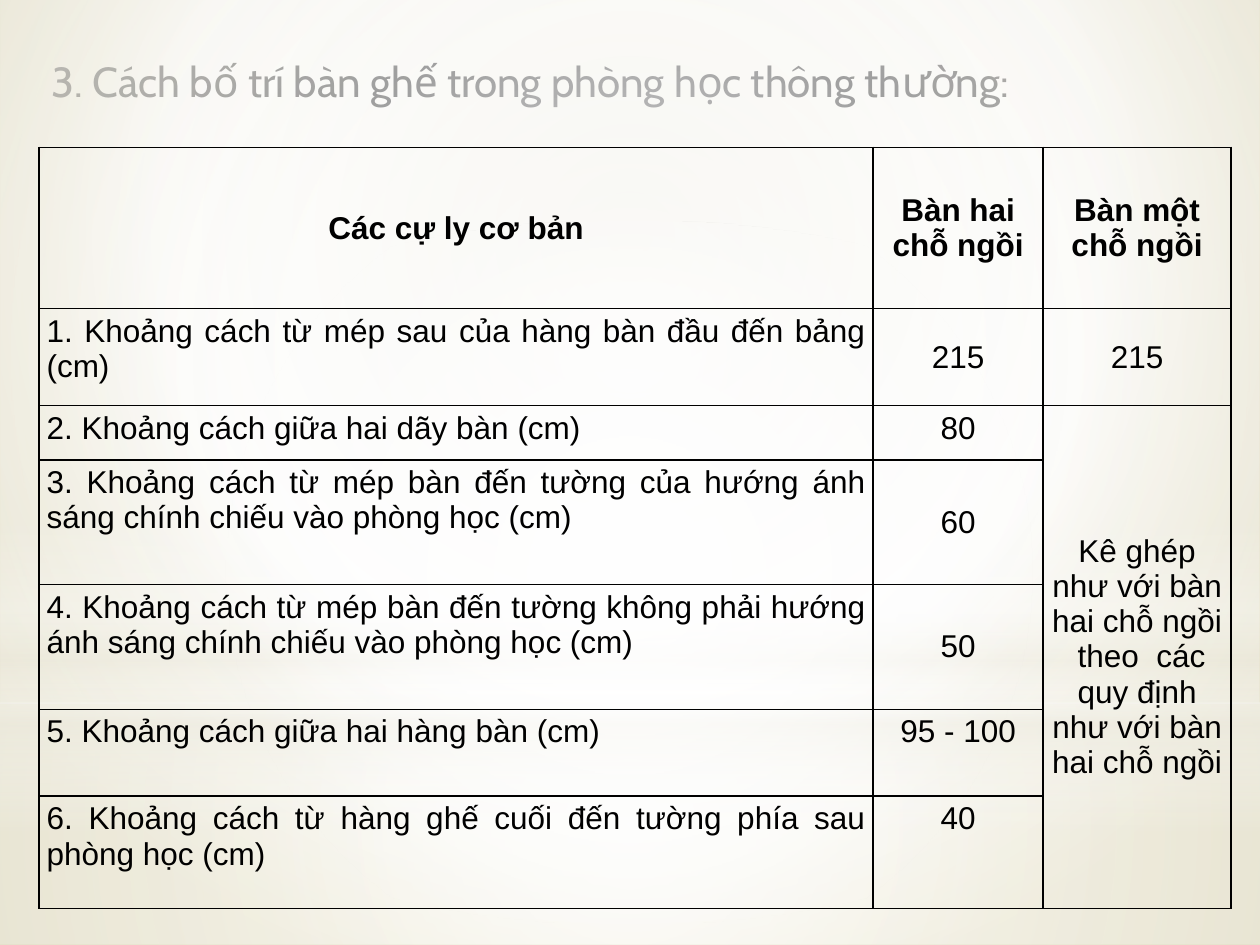
"""Build a slide with a table of desk spacing in an ordinary classroom."""
from dataclasses import dataclass

from lxml.etree import SubElement
from pptx import Presentation
from pptx.dml.color import RGBColor
from pptx.enum.shapes import MSO_SHAPE
from pptx.enum.text import MSO_ANCHOR, MSO_AUTO_SIZE, PP_ALIGN
from pptx.oxml import parse_xml
from pptx.oxml.ns import nsdecls, qn
from pptx.util import Inches, Pt


@dataclass(frozen=True)
class Theme:
    ink: str = "000000"
    white: str = "FFFFFF"
    cream: str = "EEECE1"
    edge: str = "E7E4D4"
    sand: str = "D5CC9F"
    title_font: str = "Cabin"
    table_font: str = "Arial"
    title_size: int = 24
    table_size: int = 18
    border_width: int = 1


def fill_gradient(owner, fill, stops, direction):
    fill.gradient()
    stop_xml = "".join(
        f'<a:gs pos="{position * 1000}"><a:srgbClr val="{color}">'
        f'<a:alpha val="{opacity * 1000}"/></a:srgbClr></a:gs>'
        for position, color, opacity in stops
    )
    gradient = parse_xml(
        f'<a:gradFill {nsdecls("a")} rotWithShape="1"><a:gsLst>{stop_xml}</a:gsLst>'
        f"{direction}</a:gradFill>"
    )
    current = owner.element.find(".//" + qn("a:gradFill"))
    current.getparent().replace(current, gradient)


def circle(left, top, right, bottom):
    return (
        f'<a:path path="circle"><a:fillToRect l="{left * 1000}" t="{top * 1000}" '
        f'r="{right * 1000}" b="{bottom * 1000}"/></a:path>'
    )


theme = Theme()
ink = RGBColor.from_string(theme.ink)
deck = Presentation()
deck.slide_width, deck.slide_height = Inches(10), Inches(7.5)
page = deck.slides.add_slide(deck.slide_layouts[5])

backdrop = [(0, theme.edge, 100), (60, theme.white, 100), (100, theme.sand, 100)]
fill_gradient(page, page.background.fill, backdrop, circle(20, 10, 20, 60))

centred = circle(50, 50, 50, 50)
downward = '<a:lin ang="5400000" scaled="0"/>'
glows = [
    (MSO_SHAPE.RECTANGLE, 5.58, 1.92, centred,
     [(0, theme.white, 91), (37, theme.white, 76), (100, theme.cream, 79)]),
    (MSO_SHAPE.RECTANGLE, 0, 5.58, centred,
     [(0, theme.white, 89), (48, theme.white, 62), (100, theme.cream, 79)]),
    (MSO_SHAPE.RECTANGLE, 4.12, 2.5, downward,
     [(0, theme.white, 0), (29, theme.white, 30), (45, theme.cream, 40),
      (55, theme.white, 26), (65, theme.cream, 60), (100, theme.white, 0)]),
    (MSO_SHAPE.OVAL, 1.75, 5.58, centred,
     [(0, theme.white, 100), (56, theme.white, 0)]),
]
for preset, top, height, direction, stops in glows:
    glow = page.shapes.add_shape(preset, 0, Inches(top), deck.slide_width, Inches(height))
    glow.shadow.inherit = False
    glow.line.fill.background()
    fill_gradient(glow, glow.fill, stops, direction)

title = page.shapes.title
title.left, title.top = Inches(0.31), Inches(0.39)
title.width, title.height = Inches(9.06), Inches(0.5)
frame = title.text_frame
frame.text = "3. Cách bố trí bàn ghế trong phòng học thông thường:"
frame.word_wrap = True
frame.auto_size = MSO_AUTO_SIZE.SHAPE_TO_FIT_TEXT
frame.vertical_anchor = MSO_ANCHOR.TOP
heading = frame.paragraphs[0]
heading.alignment = PP_ALIGN.LEFT
heading.font.name, heading.font.size = theme.title_font, Pt(theme.title_size)
heading.font.color.rgb = ink

rows = [
    ("Các cự ly cơ bản", "Bàn hai chỗ ngồi", "Bàn một chỗ ngồi"),
    ("1. Khoảng cách từ mép sau của hàng bàn đầu đến bảng (cm)", "215", "215"),
    ("2. Khoảng cách giữa hai dãy bàn (cm)", "80",
     "Kê ghép như với bàn hai chỗ ngồi  theo  các quy định như với bàn hai chỗ ngồi"),
    ("3. Khoảng cách từ mép bàn đến tường của hướng ánh sáng chính chiếu vào phòng học (cm)",
     "60", ""),
    ("4. Khoảng cách từ mép bàn đến tường không phải hướng ánh sáng chính chiếu vào phòng học (cm)",
     "50", ""),
    ("5. Khoảng cách giữa hai hàng bàn (cm)", "95 - 100", ""),
    ("6. Khoảng cách từ hàng ghế cuối đến tường phía sau phòng học (cm)", "40", ""),
]
column_widths = [6.62, 1.35, 1.49]
row_heights = [1.28, 0.77, 0.43, 0.99, 0.99, 0.69, 0.89]
top_values = {"80", "95 - 100", "40"}

table = page.shapes.add_table(
    len(rows), len(column_widths), Inches(0.31), Inches(1.17),
    Inches(sum(column_widths)), Inches(sum(row_heights)),
).table
table.horz_banding = False
for column, width in zip(table.columns, column_widths):
    column.width = Inches(width)
for row, height in zip(table.rows, row_heights):
    row.height = Inches(height)
table.cell(2, 2).merge(table.cell(6, 2))

for row_index, texts in enumerate(rows):
    for column_index, text in enumerate(texts):
        cell = table.cell(row_index, column_index)
        is_header = row_index == 0
        is_label = column_index == 0 and not is_header
        at_top = is_label or text in top_values
        cell.vertical_anchor = MSO_ANCHOR.TOP if at_top else MSO_ANCHOR.MIDDLE
        cell.margin_left = cell.margin_right = Inches(0.06)
        cell.margin_top = cell.margin_bottom = Inches(0.04)
        cell.fill.background()
        properties = cell._tc.get_or_add_tcPr()
        for position, side in enumerate(("a:lnL", "a:lnR", "a:lnT", "a:lnB")):
            border = SubElement(properties, qn(side), w=str(Pt(theme.border_width)))
            solid = SubElement(border, qn("a:solidFill"))
            SubElement(solid, qn("a:srgbClr"), val=theme.ink)
            properties.insert(position, border)
        if cell.is_spanned:
            continue
        cell.text = text
        para = cell.text_frame.paragraphs[0]
        para.alignment = PP_ALIGN.JUSTIFY if is_label else PP_ALIGN.CENTER
        para.font.name, para.font.size = theme.table_font, Pt(theme.table_size)
        para.font.bold = is_header
        para.font.color.rgb = ink

deck.save("out.pptx")
